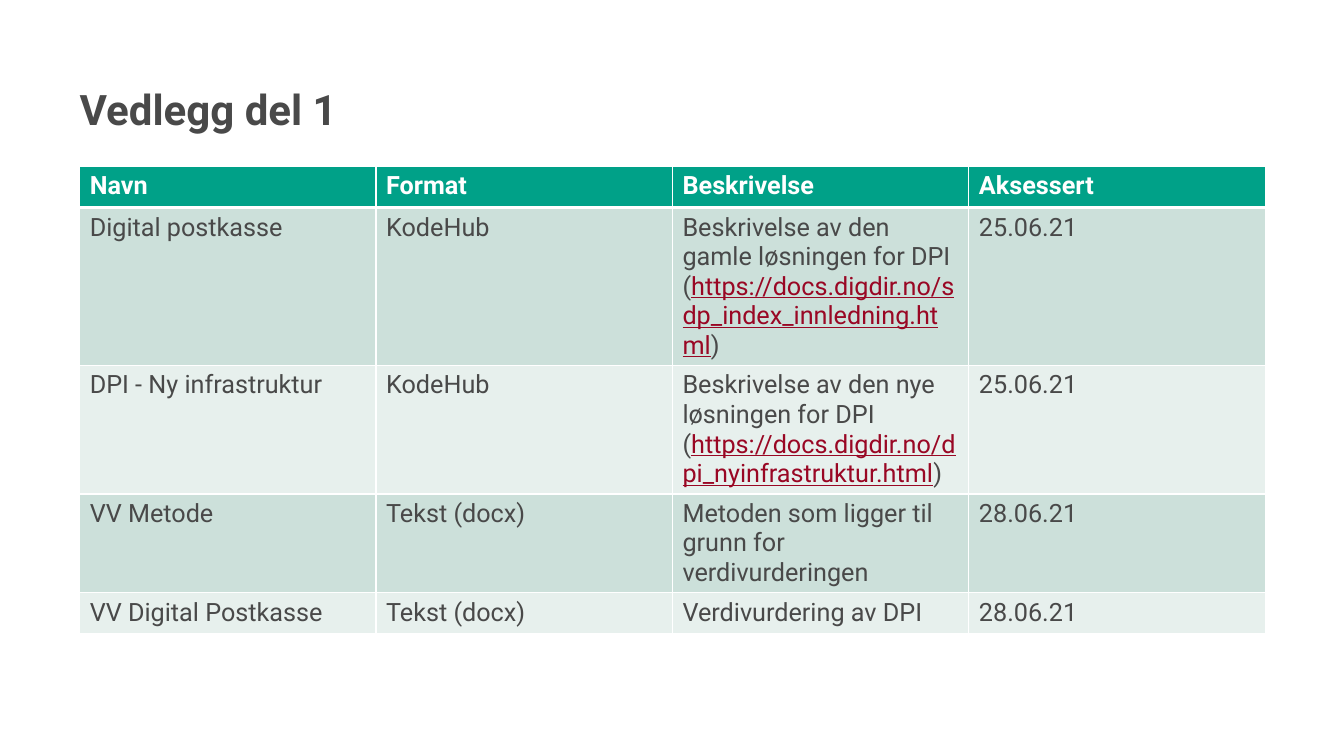
from lxml import etree
from pptx import Presentation
from pptx import util as u
from pptx.dml.color import RGBColor
from pptx.enum import text
from pptx.oxml.ns import qn

COLORS = {"ink": "494949", "white": "FFFFFF", "header": "00A188",
          "odd": "CCE0DA", "even": "E7F0ED", "link": "990724"}
LEFT, COLUMN = 0.79, 2.94  # grid of four equal columns, in inches
ROW = 0.41

HEADINGS = ["Navn", "Format", "Beskrivelse", "Aksessert"]
# A cell is a list of (text, is_address) runs or a plain string
ATTACHMENTS = [
    ["Digital postkasse", "KodeHub",
     [("Beskrivelse av den gamle løsningen for DPI (", False),
      ("https://docs.digdir.no/sdp_index_innledning.html", True),
      (")", False)], "25.06.21"],
    ["DPI - Ny infrastruktur", "KodeHub",
     [("Beskrivelse av den nye løsningen for DPI (", False),
      ("https://docs.digdir.no/dpi_nyinfrastruktur.html", True),
      (")", False)], "25.06.21"],
    ["VV Metode", "Tekst (docx)",
     "Metoden som ligger til grunn for verdivurderingen", "28.06.21"],
    ["VV Digital Postkasse", "Tekst (docx)", "Verdivurdering av DPI", "28.06.21"],
]


class SlideBuilder:
    """Holds the style and the current slide."""

    def __init__(self, deck, font="Roboto"):
        self.font = font
        self.slide = deck.slides.add_slide(deck.slide_layouts[5])

    def add_run(self, para, words, size, color, bold=False, underline=False):
        span = para.add_run()
        span.text = words
        span.font.name, span.font.size = self.font, u.Pt(size)
        span.font.bold, span.font.underline = bold, underline
        span.font.color.rgb = RGBColor.from_string(COLORS[color])

    def title(self, words, top, height, columns=4):
        box = self.slide.shapes.title
        box.left, box.top = u.Inches(LEFT), u.Inches(top)
        box.width, box.height = u.Inches(columns * COLUMN), u.Inches(height)
        frame = box.text_frame
        frame.word_wrap = True
        frame.auto_size = text.MSO_AUTO_SIZE.NONE
        frame.vertical_anchor = text.MSO_ANCHOR.MIDDLE
        frame.margin_left = frame.margin_right = 0
        frame.margin_top = frame.margin_bottom = 0
        para = frame.paragraphs[0]
        para.alignment = text.PP_ALIGN.LEFT
        para.line_spacing = 0.9
        self.add_run(para, words, 30, "ink", bold=True)

    def borders(self, cell, widths):
        props = cell._tc.get_or_add_tcPr()
        for place, (side, width) in enumerate(widths.items()):
            line = etree.Element(qn(f"a:ln{side}"), w=str(u.Pt(width)))
            fill = etree.SubElement(line, qn("a:solidFill"))
            etree.SubElement(fill, qn("a:srgbClr"), val=COLORS["white"])
            props.insert(place, line)

    def table(self, rows, top, height):
        frame = self.slide.shapes.add_table(
            len(rows), len(rows[0]), u.Inches(LEFT), u.Inches(top),
            u.Inches(len(rows[0]) * COLUMN), u.Inches(len(rows) * ROW))
        frame.height = u.Inches(height)  # rows grow with their text
        for r, row in enumerate(rows):
            band = "header" if r == 0 else "odd" if r % 2 else "even"
            for c, content in enumerate(row):
                cell = frame.table.cell(r, c)
                cell.fill.solid()
                cell.fill.fore_color.rgb = RGBColor.from_string(COLORS[band])
                self.borders(cell, {"L": 1, "R": 1, "T": 3 if r == 1 else 1,
                                    "B": 3 if r == 0 else 1})
                para = cell.text_frame.paragraphs[0]
                runs = [(content, False)] if isinstance(content, str) else content
                for words, is_address in runs:
                    color = "white" if r == 0 else "link" if is_address else "ink"
                    self.add_run(para, words, 18, color, r == 0, is_address)


def main():
    deck = Presentation()
    deck.slide_width, deck.slide_height = u.Inches(13.33), u.Inches(7.5)
    page = SlideBuilder(deck)
    # Heading
    page.title("Vedlegg del 1", top=0.81, height=0.6)
    # Attachments
    page.table([HEADINGS] + ATTACHMENTS, top=1.65, height=4.71)
    deck.save("out.pptx")


if __name__ == "__main__":
    main()
